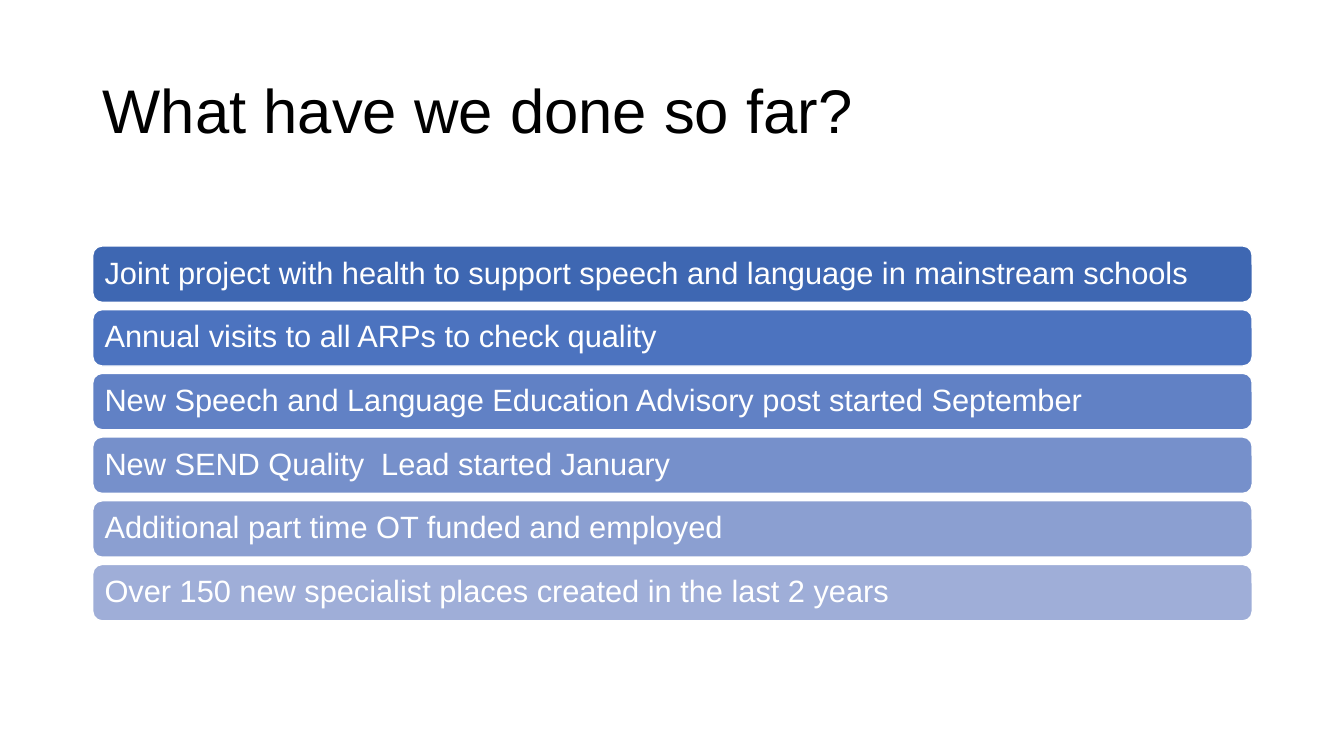
import dataclasses

import pptx
import pptx.dml.color
import pptx.enum.shapes
import pptx.enum.text
import pptx.util

Inches = pptx.util.Inches

COLOURS = {
    "title": "000000",
    "white": "FFFFFF",
    "step_1": "3E67B2",
    "step_2": "4C73BF",
    "step_3": "6181C5",
    "step_4": "7690CB",
    "step_5": "8B9FD1",
    "step_6": "9FAED8",
}
FONT = "Arial"
LEFT, WIDTH = 0.92, 11.5
FIRST_TOP, LAST_TOP, BAR_HEIGHT = 2.44, 5.6, 0.56


@dataclasses.dataclass(frozen=True)
class Achievement:
    text: str
    fill: str


ACHIEVEMENTS = [
    Achievement("Joint project with health to support speech and language in mainstream schools", "step_1"),
    Achievement("Annual visits to all ARPs to check quality", "step_2"),
    Achievement("New Speech and Language Education Advisory post started September", "step_3"),
    Achievement("New SEND Quality  Lead started January", "step_4"),
    Achievement("Additional part time OT funded and employed", "step_5"),
    Achievement("Over 150 new specialist places created in the last 2 years", "step_6"),
]


def colour(name: str) -> pptx.dml.color.RGBColor:
    return pptx.dml.color.RGBColor.from_string(COLOURS[name])


def write_text(shape, text: str, *, size: float, font_colour: str, side_margin: float) -> None:
    """Fill a shape with one left-aligned, vertically centred paragraph."""
    frame = shape.text_frame
    frame.word_wrap = True
    frame.auto_size = pptx.enum.text.MSO_AUTO_SIZE.NONE
    frame.vertical_anchor = pptx.enum.text.MSO_ANCHOR.MIDDLE
    frame.margin_left = frame.margin_right = Inches(side_margin)
    frame.margin_top = frame.margin_bottom = Inches(0.05)
    paragraph = frame.paragraphs[0]
    paragraph.alignment = pptx.enum.text.PP_ALIGN.LEFT
    paragraph.line_spacing = 0.9
    run = paragraph.add_run()
    run.text = text
    run.font.name = FONT
    run.font.size = pptx.util.Pt(size)
    run.font.color.rgb = colour(font_colour)


def add_bar(slide, achievement: Achievement, top: float) -> None:
    shape = slide.shapes.add_shape(
        pptx.enum.shapes.MSO_SHAPE.ROUNDED_RECTANGLE,
        Inches(LEFT), Inches(top), Inches(WIDTH), Inches(BAR_HEIGHT),
    )
    shape.shadow.inherit = False
    shape.fill.solid()
    shape.fill.fore_color.rgb = colour(achievement.fill)
    shape.line.color.rgb = colour("white")
    shape.line.width = pptx.util.Pt(1)
    write_text(shape, achievement.text, size=22, font_colour="white", side_margin=0.09)


def main() -> None:
    presentation = pptx.Presentation()
    presentation.slide_width = Inches(13.33)
    presentation.slide_height = Inches(7.5)
    slide = presentation.slides.add_slide(presentation.slide_layouts.get_by_name("Title Only"))

    # Title
    title = slide.shapes.title
    title.left, title.top = Inches(LEFT), Inches(0.4)
    title.width, title.height = Inches(WIDTH), Inches(1.45)
    write_text(title, "What have we done so far?", size=44, font_colour="title", side_margin=0.1)

    # Evenly spaced achievement bars
    pitch = (LAST_TOP - FIRST_TOP) / (len(ACHIEVEMENTS) - 1)
    for index, achievement in enumerate(ACHIEVEMENTS):
        add_bar(slide, achievement, FIRST_TOP + index * pitch)

    presentation.save("out.pptx")


if __name__ == "__main__":
    main()
